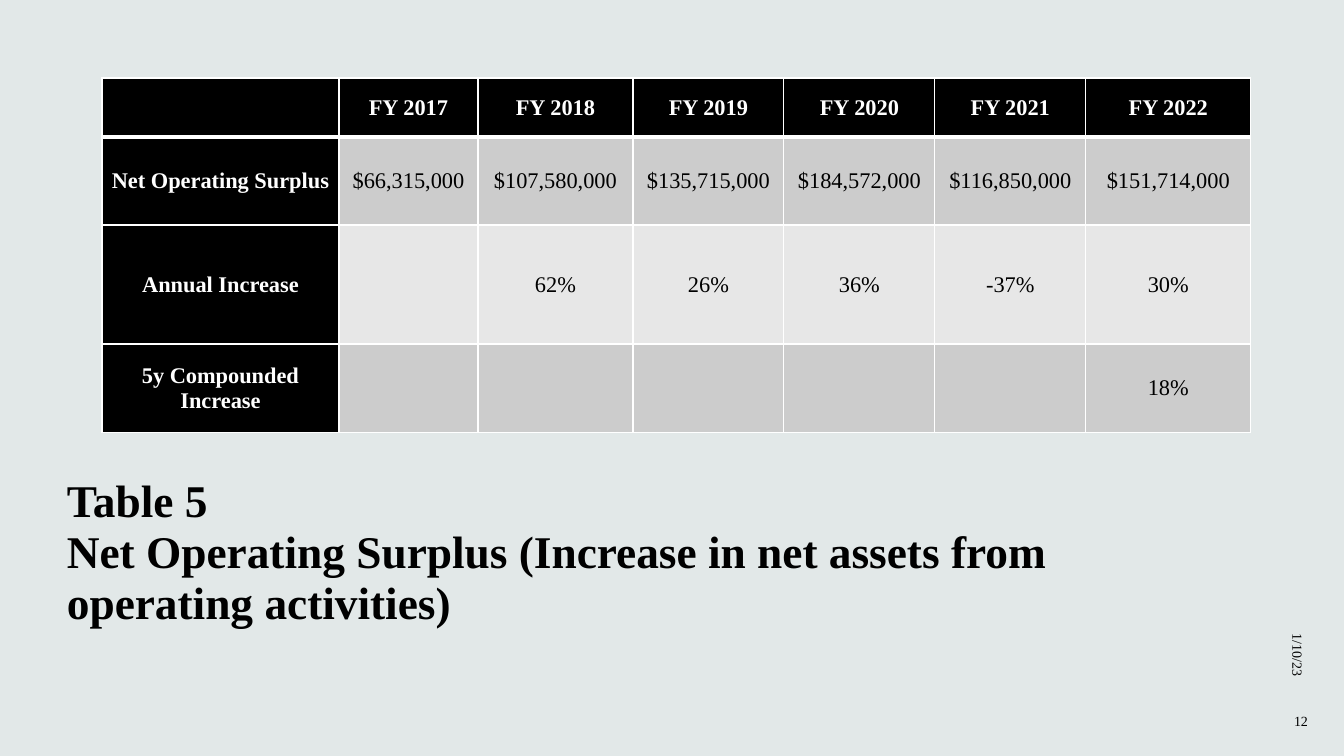
"""Build the Net Operating Surplus table slide."""
from dataclasses import dataclass

from lxml import etree
from pptx import Presentation
from pptx.dml.color import RGBColor
from pptx.enum.text import MSO_ANCHOR, PP_ALIGN
from pptx.oxml.ns import qn
from pptx.util import Emu, Pt

LEFT, CENTER, RIGHT = PP_ALIGN.LEFT, PP_ALIGN.CENTER, PP_ALIGN.RIGHT
MIDDLE, BOTTOM = MSO_ANCHOR.MIDDLE, MSO_ANCHOR.BOTTOM

TITLE_LINES = [
    "Table 5",
    "Net Operating Surplus (Increase in net assets from operating activities)",
]
DATE = "1/10/23"
PAGE_NUMBER = "12"
TABLE_ROWS = [
    ["", "FY 2017", "FY 2018", "FY 2019", "FY 2020", "FY 2021", "FY 2022"],
    ["Net Operating Surplus", "$66,315,000", "$107,580,000", "$135,715,000",
     "$184,572,000", "$116,850,000", "$151,714,000"],
    ["Annual Increase", "", "62%", "26%", "36%", "-37%", "30%"],
    ["5y Compounded Increase", "", "", "", "", "", "18%"],
]

SLIDE_SIZE = (1344, 756)
TABLE_ORIGIN = (102, 78)
COLUMN_WIDTHS = [237, 139, 155, 151, 151, 151, 165]
ROW_HEIGHTS = [59, 88, 119, 89]
TITLE_BOX = (57, 468, 1193, 232)
TITLE_BOTTOM_INSET = 70
DATE_BOX = (1149, 517, 298, 40)
NUMBER_BOX = (1269, 701, 64, 40)
CELL_INSET = 7


@dataclass(frozen=True)
class Theme:
    """Colours, font and type sizes."""
    font: str = "Times New Roman"
    background: str = "E2E8E8"
    dark: str = "000000"
    light: str = "FFFFFF"
    bands: tuple = ("E7E7E7", "CCCCCC")
    title_size: float = 32.4
    table_size: int = 16
    footer_size: int = 10
    title_spacing: float = 0.94
    border: int = 1
    header_border: int = 3


THEME = Theme()


def px(length):
    """Convert px to EMU at 100.8 px per inch."""
    return Emu(round(length * 914400 / 100.8))


def add_run(paragraph, text, size, color, bold=False):
    """Append a styled run."""
    run = paragraph.add_run()
    run.text = text
    run.font.name = THEME.font
    run.font.size = Pt(size)
    run.font.bold = bold
    run.font.color.rgb = RGBColor.from_string(color)


def add_text(slide, box, lines, size, align, anchor, bold=False):
    """Add a text box whose lines share one paragraph."""
    shape = slide.shapes.add_textbox(*map(px, box))
    frame = shape.text_frame
    frame.word_wrap = True
    frame.vertical_anchor = anchor
    paragraph = frame.paragraphs[0]
    paragraph.alignment = align
    for index, line in enumerate(lines):
        if index:
            paragraph.add_line_break()
        add_run(paragraph, line, size, THEME.dark, bold)
    return shape


def set_borders(cell, top, bottom):
    """Draw the four cell borders, ahead of the fill element."""
    properties = cell._tc.get_or_add_tcPr()
    sides = {"L": THEME.border, "R": THEME.border, "T": top, "B": bottom}
    for position, (side, width) in enumerate(sides.items()):
        line = etree.Element(qn(f"a:ln{side}"), w=str(Pt(width)))
        fill = etree.SubElement(line, qn("a:solidFill"))
        etree.SubElement(fill, qn("a:srgbClr"), val=THEME.light)
        properties.insert(position, line)


def style_cell(cell, text, row, column):
    """Fill, border and label one table cell."""
    heading = row == 0 or column == 0
    cell.fill.solid()
    cell.fill.fore_color.rgb = RGBColor.from_string(
        THEME.dark if heading else THEME.bands[row % 2])
    set_borders(cell,
                THEME.header_border if row == 1 else THEME.border,
                THEME.header_border if row == 0 else THEME.border)
    cell.margin_left = cell.margin_right = px(CELL_INSET)
    cell.margin_top = cell.margin_bottom = 0
    cell.vertical_anchor = MIDDLE
    if text:
        paragraph = cell.text_frame.paragraphs[0]
        paragraph.alignment = CENTER
        color = THEME.light if heading else THEME.dark
        add_run(paragraph, text, THEME.table_size, color, heading)


def add_surplus_table(slide):
    """Add the table of surplus by fiscal year."""
    size = (sum(COLUMN_WIDTHS), sum(ROW_HEIGHTS))
    table = slide.shapes.add_table(
        len(ROW_HEIGHTS), len(COLUMN_WIDTHS),
        *map(px, TABLE_ORIGIN + size)).table
    for column, width in zip(table.columns, COLUMN_WIDTHS):
        column.width = px(width)
    for row, height in zip(table.rows, ROW_HEIGHTS):
        row.height = px(height)
    for row, texts in enumerate(TABLE_ROWS):
        for column, text in enumerate(texts):
            style_cell(table.cell(row, column), text, row, column)


def main():
    """Assemble and save the slide."""
    presentation = Presentation()
    presentation.slide_width, presentation.slide_height = map(px, SLIDE_SIZE)
    slide = presentation.slides.add_slide(presentation.slide_layouts[6])
    background = slide.background.fill
    background.solid()
    background.fore_color.rgb = RGBColor.from_string(THEME.background)

    title = add_text(slide, TITLE_BOX, TITLE_LINES, THEME.title_size,
                     LEFT, BOTTOM, bold=True)
    title.text_frame.margin_bottom = px(TITLE_BOTTOM_INSET)
    title.text_frame.paragraphs[0].line_spacing = THEME.title_spacing
    date = add_text(slide, DATE_BOX, [DATE], THEME.footer_size, RIGHT, MIDDLE)
    date.rotation = 90
    add_text(slide, NUMBER_BOX, [PAGE_NUMBER], THEME.footer_size,
             CENTER, MIDDLE)
    add_surplus_table(slide)
    presentation.save("out.pptx")


if __name__ == "__main__":
    main()
